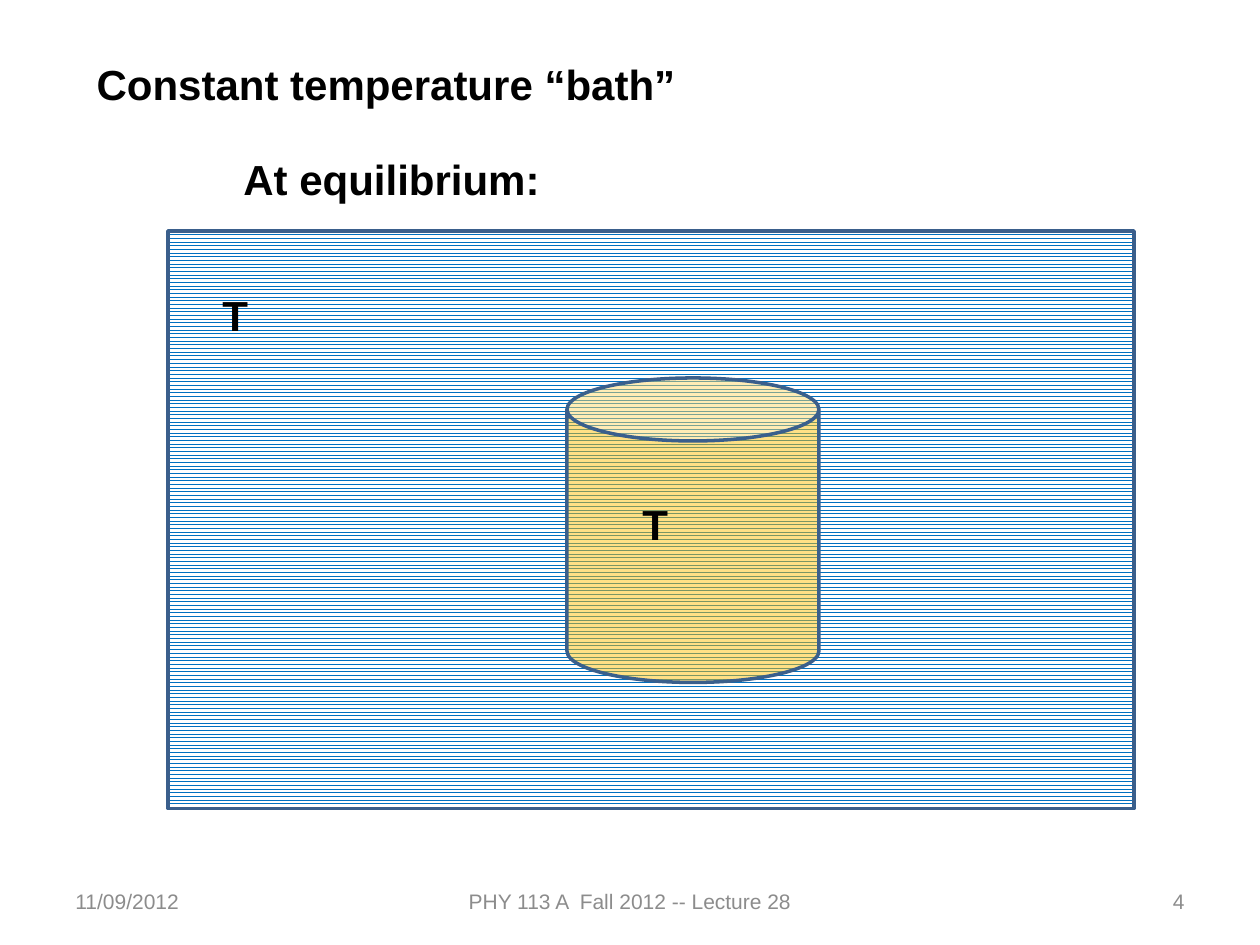
from lxml import etree
from pptx import Presentation
from pptx.dml.color import RGBColor
from pptx.enum.dml import MSO_PATTERN
from pptx.enum.shapes import MSO_SHAPE
from pptx.enum.text import MSO_ANCHOR, MSO_AUTO_SIZE, PP_ALIGN
from pptx.oxml.ns import qn
from pptx.util import Pt

LEFT, CENTER, RIGHT = PP_ALIGN.LEFT, PP_ALIGN.CENTER, PP_ALIGN.RIGHT
TOP, MIDDLE = MSO_ANCHOR.TOP, MSO_ANCHOR.MIDDLE
RECT, CAN = MSO_SHAPE.RECTANGLE, MSO_SHAPE.CAN
ZIG_ZAG = MSO_PATTERN.ZIG_ZAG

BLACK = RGBColor(0x00, 0x00, 0x00)
WHITE = RGBColor(0xFF, 0xFF, 0xFF)
GRAY = RGBColor(0x8C, 0x8C, 0x8C)
WATER = RGBColor(0x00, 0x70, 0xC0)
GOLD = RGBColor(0xFF, 0xC0, 0x00)
OUTLINE = RGBColor(0x3A, 0x5F, 0x8C)

TITLE = ("Constant temperature “bath”", (48, 30, 600, 36))
LABELS = [
    ("T", (120, 162, 108, 36)),
    ("T", (360, 281.5, 108, 36)),
    ("At equilibrium:", (132, 84, 432, 36)),
]
FOOTERS = [
    ("11/09/2012", (36, 500.5, 168, 28.75), LEFT),
    ("PHY 113 A  Fall 2012 -- Lecture 28", (246, 500.5, 228, 28.75), CENTER),
    ("4", (516, 500.5, 168, 28.75), RIGHT),
]
BATH = (96, 132, 552, 330)
CYLINDER = (324, 216, 144, 174)
CYLINDER_ALPHA = 48


def points(box):
    """Convert a box of numbers to point lengths."""
    return [Pt(v) for v in box]


def write(sp, text, size=24, color=BLACK, bold=True, align=LEFT, anchor=TOP):
    """Put formatted text in a shape."""
    tf = sp.text_frame
    tf.word_wrap = True
    tf.auto_size = MSO_AUTO_SIZE.NONE
    tf.vertical_anchor = anchor
    p = tf.paragraphs[0]
    p.alignment = align
    r = p.add_run()
    r.text = text
    r.font.name = "Arial"
    r.font.size = Pt(size)
    r.font.bold = bold
    r.font.color.rgb = color


def add_outlined(s, kind, box):
    """Add a shape with the common outline."""
    sp = s.shapes.add_shape(kind, *points(box))
    sp.shadow.inherit = False
    sp.line.color.rgb = OUTLINE
    sp.line.width = Pt(2)
    return sp


def main():
    """Build the temperature bath slide."""
    prs = Presentation()
    prs.slide_width, prs.slide_height = Pt(720), Pt(540)
    s = prs.slides.add_slide(prs.slide_layouts[5])

    text, box = TITLE
    title = s.shapes.title
    title.left, title.top, title.width, title.height = points(box)
    write(title, text)

    for text, box, align in FOOTERS:
        write(s.shapes.add_textbox(*points(box)), text, size=12, color=GRAY,
              bold=False, align=align, anchor=MIDDLE)

    bath = add_outlined(s, RECT, BATH)
    bath.fill.patterned()
    bath.fill.pattern = ZIG_ZAG
    bath.fill.fore_color.rgb = WATER
    bath.fill.back_color.rgb = WHITE

    cylinder = add_outlined(s, CAN, CYLINDER)
    cylinder.fill.solid()
    cylinder.fill.fore_color.rgb = GOLD
    color = cylinder.element.spPr.find(qn("a:solidFill")).find(qn("a:srgbClr"))
    etree.SubElement(color, qn("a:alpha")).set("val", str(CYLINDER_ALPHA * 1000))

    for text, box in LABELS:
        write(s.shapes.add_textbox(*points(box)), text)

    prs.save("out.pptx")


if __name__ == "__main__":
    main()
